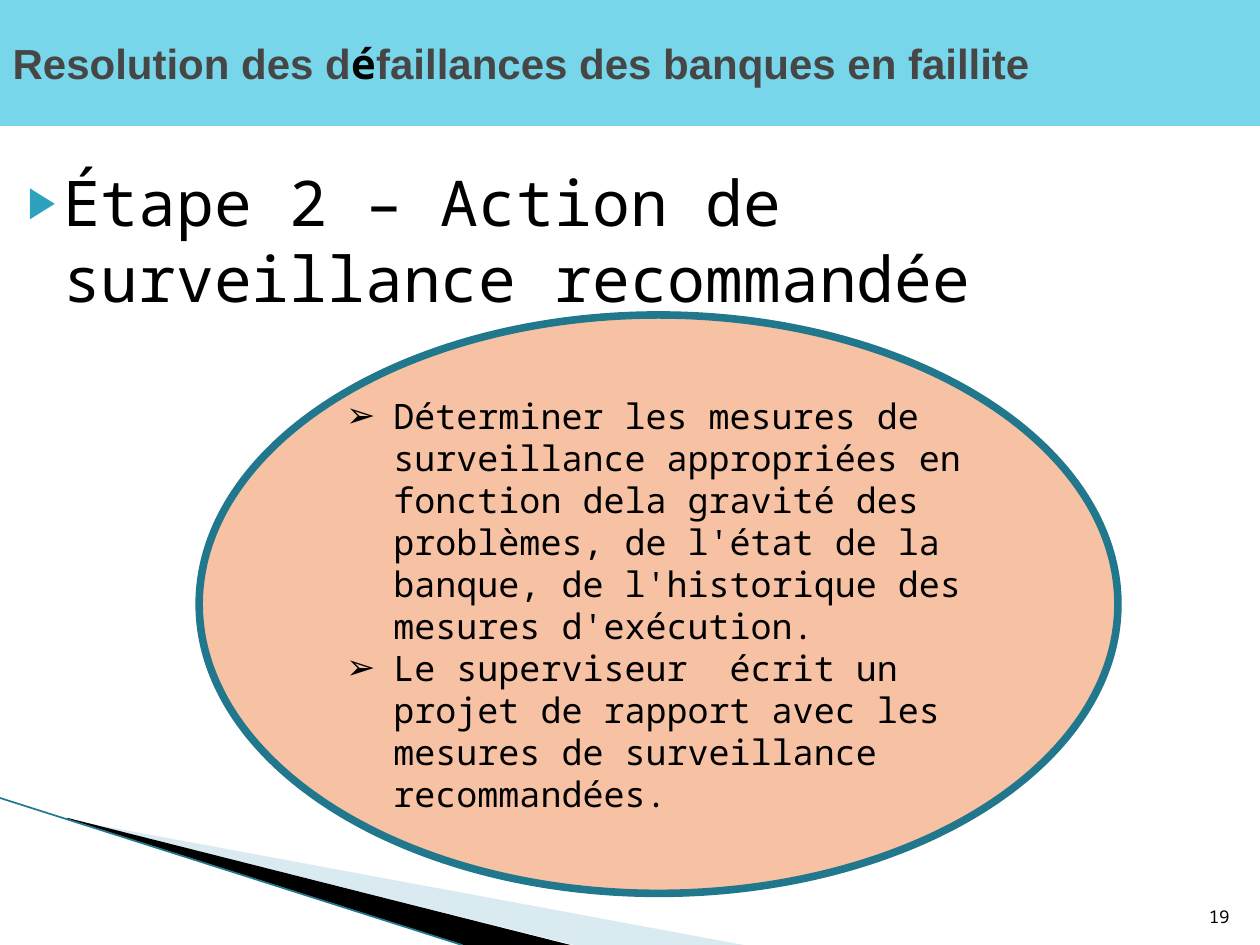
import pptx
import pptx.dml.color
import pptx.enum.shapes
import pptx.enum.text
import pptx.oxml
import pptx.oxml.ns
import pptx.util
import lxml.etree

Pt = pptx.util.Pt
qn = pptx.oxml.ns.qn
SHAPES = pptx.enum.shapes.MSO_SHAPE
ALIGN = pptx.enum.text.PP_ALIGN
ANCHOR = pptx.enum.text.MSO_ANCHOR
MONO = "Noto Sans Mono"
BLACK = "000000"


def rgb(code):
    return pptx.dml.color.RGBColor.from_string(code)


def place(shape, left, top, width, height):
    shape.left, shape.top = Pt(left), Pt(top)
    shape.width, shape.height = Pt(width), Pt(height)


def paint(shape, code):
    shape.fill.solid()
    shape.fill.fore_color.rgb = rgb(code)


def prepare_frame(shape, anchor):
    frame = shape.text_frame
    frame.word_wrap = True
    frame.auto_size = pptx.enum.text.MSO_AUTO_SIZE.NONE
    frame.vertical_anchor = anchor
    return frame


def add_run(paragraph, text, size, font=MONO, color=BLACK, bold=False):
    run = paragraph.add_run()
    run.text = text
    run.font.size = Pt(size)
    run.font.name = font
    run.font.bold = bold
    run.font.color.rgb = rgb(color)


def set_bullet(paragraph, char, indent, hanging, color=None, percent=None):
    properties = paragraph._p.get_or_add_pPr()
    properties.set("marL", str(Pt(indent)))
    properties.set("indent", str(-Pt(hanging)))
    if color:
        holder = lxml.etree.SubElement(properties, qn("a:buClr"))
        lxml.etree.SubElement(holder, qn("a:srgbClr"), val=color)
    if percent:
        lxml.etree.SubElement(properties, qn("a:buSzPct"), val=str(percent * 1000))
    lxml.etree.SubElement(properties, qn("a:buFont"), typeface="Arial")
    lxml.etree.SubElement(properties, qn("a:buChar"), char=char)


def add_wedge(slide, corners, color, opacity=None):
    points = [(Pt(x), Pt(y)) for x, y in corners]
    builder = slide.shapes.build_freeform(*points[0])
    builder.add_line_segments(points[1:], close=True)
    wedge = builder.convert_to_shape()
    wedge.shadow.inherit = False
    paint(wedge, color)
    wedge.line.fill.background()
    if opacity:
        tint = wedge._element.spPr.find(".//" + qn("a:srgbClr"))
        lxml.etree.SubElement(tint, qn("a:alpha"), val=str(opacity * 1000))


def add_edge(slide, start, end, color, width):
    edge = slide.shapes.add_connector(
        pptx.enum.shapes.MSO_CONNECTOR.STRAIGHT, *map(Pt, start + end))
    edge.line.color.rgb = rgb(color)
    edge.line.width = Pt(width)
    lxml.etree.SubElement(edge._element.spPr, qn("a:effectLst"))


def fill_title(title):
    place(title, 0, 0, 720, 72)
    paint(title, "78D6EA")
    heading = prepare_frame(title, ANCHOR.MIDDLE).paragraphs[0]
    heading.alignment = ALIGN.LEFT
    for text, font, color in (
        ("Resolution des d", "Arial", "464646"),
        ("é", MONO, BLACK),
        ("faillances des banques en faillite", "Arial", "464646"),
    ):
        add_run(heading, text, 24, font, color, bold=True)


def fill_step(body):
    place(body, 0, 90, 720, 408)
    step = prepare_frame(body, ANCHOR.TOP).paragraphs[0]
    set_bullet(step, "▶", 28.8, 20.16, "2DA2BF", 68)
    step.space_before = Pt(0)
    add_run(step, "Étape 2 – Action de surveillance recommandée", 36)


def add_measures(slide, measures):
    oval = slide.shapes.add_shape(
        SHAPES.OVAL, Pt(113.8), Pt(180), Pt(525), Pt(330.5))
    oval.shadow.inherit = False
    paint(oval, "F7C1A4")
    oval.line.color.rgb = rgb("21788D")
    oval.line.width = Pt(4.33)
    frame = prepare_frame(oval, ANCHOR.MIDDLE)
    for index, measure in enumerate(measures):
        paragraph = frame.add_paragraph() if index else frame.paragraphs[0]
        set_bullet(paragraph, "➢", 27, 27)
        paragraph.alignment = ALIGN.LEFT
        add_run(paragraph, measure, 20)


def add_page_number(slide, number):
    corner = slide.shapes.add_textbox(Pt(681), Pt(504.7), Pt(28.8), Pt(28.8))
    paragraph = prepare_frame(corner, ANCHOR.BOTTOM).paragraphs[0]
    paragraph.alignment = ALIGN.RIGHT
    add_run(paragraph, number, 10)


def main():
    deck = pptx.Presentation()
    deck.slide_width, deck.slide_height = Pt(720), Pt(540)
    slide = deck.slides.add_slide(deck.slide_layouts[1])
    add_wedge(slide, [(39.6, 468.5), (425, 540), (328, 540), (39.6, 468)],
              "A0CBDC", 40)
    add_wedge(slide, [(38.2, 467.3), (326, 540), (265, 540), (38.9, 468)], BLACK)
    add_edge(slide, (0, 456), (264, 540), "21788D", 0.95)
    fill_title(slide.shapes.title)
    fill_step(slide.placeholders[1])
    add_measures(slide, [
        "Déterminer les mesures de surveillance appropriées en fonction dela "
        "gravité des problèmes, de l'état de la banque, de l'historique des "
        "mesures d'exécution.",
        "Le superviseur  écrit un projet de rapport avec les mesures de "
        "surveillance recommandées.",
    ])
    add_page_number(slide, "19")
    deck.save("out.pptx")


if __name__ == "__main__":
    main()
